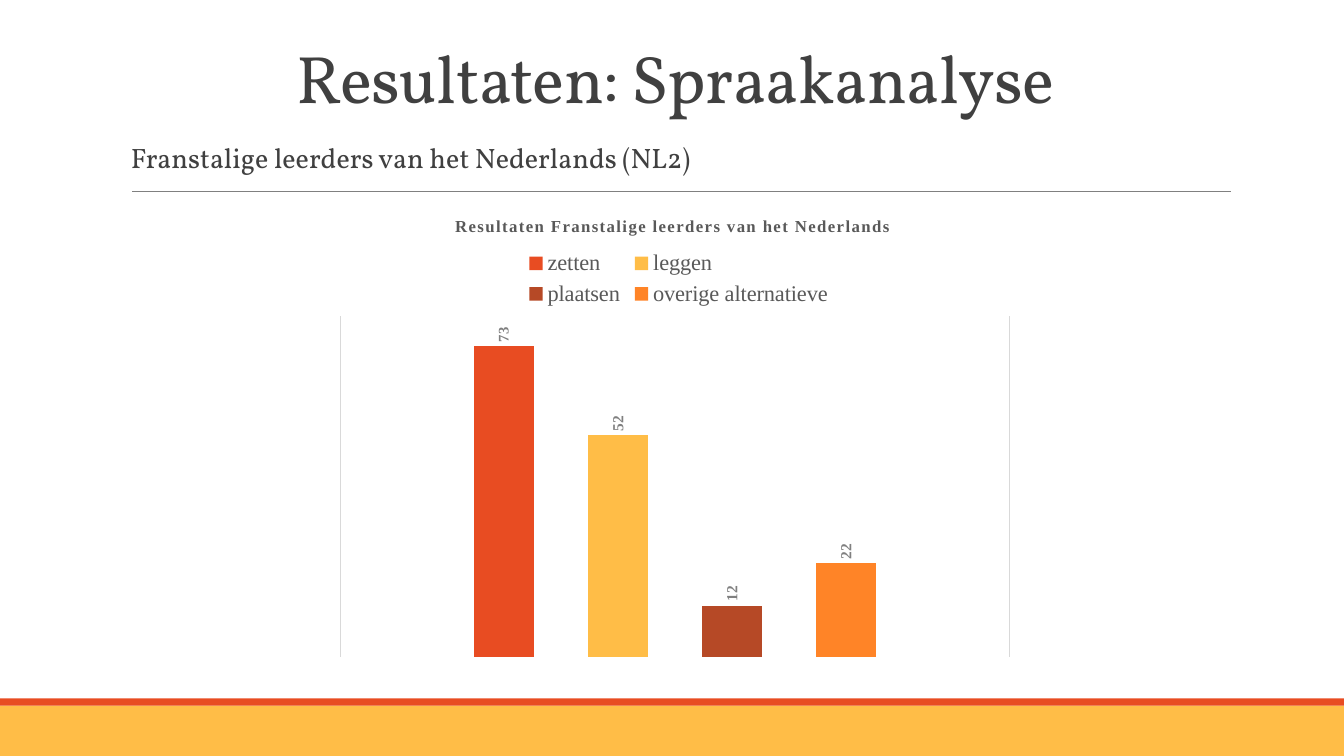
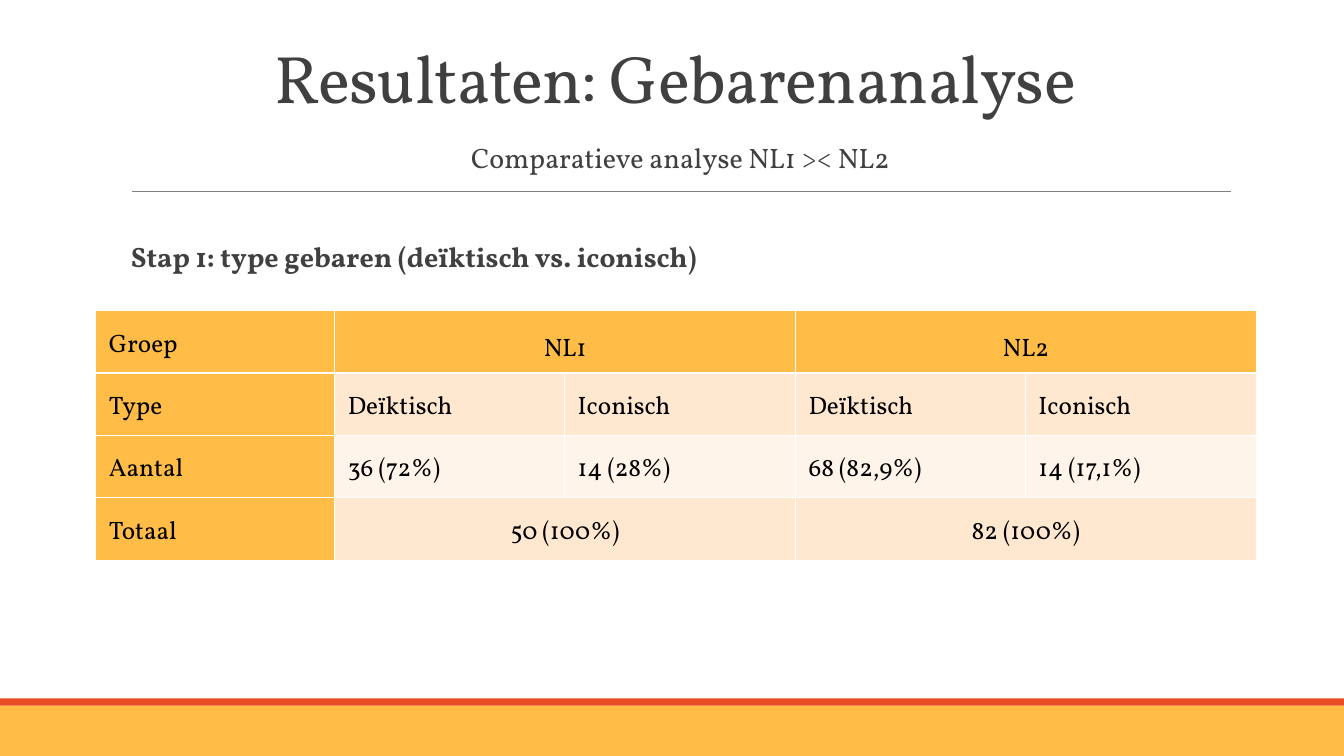
from pptx import Presentation
from pptx.chart.data import CategoryChartData
from pptx.dml.color import RGBColor
from pptx.enum.chart import XL_CHART_TYPE, XL_LABEL_POSITION, XL_LEGEND_POSITION
from pptx.enum.shapes import MSO_CONNECTOR, MSO_SHAPE
from pptx.enum.text import MSO_ANCHOR, PP_ALIGN
from pptx.oxml import parse_xml
from pptx.oxml.ns import nsdecls
from pptx.util import Inches, Pt

LEFT, CENTER, JUSTIFY = PP_ALIGN.LEFT, PP_ALIGN.CENTER, PP_ALIGN.JUSTIFY
TOP, MIDDLE, BOTTOM = MSO_ANCHOR.TOP, MSO_ANCHOR.MIDDLE, MSO_ANCHOR.BOTTOM
RECTANGLE = MSO_SHAPE.RECTANGLE
STRAIGHT = MSO_CONNECTOR.STRAIGHT
COLUMNS = XL_CHART_TYPE.COLUMN_CLUSTERED
OUTSIDE_END = XL_LABEL_POSITION.OUTSIDE_END
LEGEND_TOP = XL_LEGEND_POSITION.TOP

BLACK = RGBColor(0x00, 0x00, 0x00)
INK = RGBColor(0x40, 0x40, 0x40)
CHART_INK = RGBColor(0x59, 0x59, 0x59)
GREY = RGBColor(0x80, 0x80, 0x80)
GRID = RGBColor(0xD9, 0xD9, 0xD9)
RED = RGBColor(0xE8, 0x4C, 0x22)
YELLOW = RGBColor(0xFF, 0xBD, 0x47)
RUST = RGBColor(0xB6, 0x49, 0x26)
ORANGE = RGBColor(0xFF, 0x84, 0x27)
PEACH = RGBColor(0xFF, 0xE8, 0xCF)
CREAM = RGBColor(0xFF, 0xF4, 0xE9)

TEXT_FONT = "Vollkorn"
CHART_FONT = "Times New Roman"
PAGE_WIDTH, PAGE_HEIGHT = 13.33, 7.5
TEXT_LEFT, TEXT_WIDTH = 1.2, 11


def set_values(target, values):
    for name, value in values.items():
        setattr(target, name, value)


def style_font(font, color, size, name=TEXT_FONT, bold=False):
    set_values(font, {"name": name, "size": Pt(size), "bold": bold})
    font.color.rgb = color


def set_layout(element, index, x, y, w=None, h=None):
    for old in element.xpath("./c:layout"):
        element.remove(old)
    places = {"x": x, "y": y, "w": w, "h": h}
    marks = '<c:layoutTarget val="inner"/>' if index == 0 else ""
    marks += '<c:xMode val="edge"/><c:yMode val="edge"/>'
    marks += "".join(f'<c:{key} val="{value}"/>'
                     for key, value in places.items() if value is not None)
    element.insert(index, parse_xml(
        f'<c:layout {nsdecls("c")}><c:manualLayout>{marks}</c:manualLayout></c:layout>'))


class Deck:
    def __init__(self):
        self.deck = Presentation()
        self.deck.slide_width = Inches(PAGE_WIDTH)
        self.deck.slide_height = Inches(PAGE_HEIGHT)
        self.page = None

    def add_page(self, title):
        self.page = self.deck.slides.add_slide(self.deck.slide_layouts[6])
        self.band(7, 0.5, YELLOW)
        self.band(6.93, 0.07, RED)
        self.rule(1.31, 12.21, 1.9)
        span = self.text(title, 0.31, 0.9, 48, align=CENTER, anchor=BOTTOM, spacing=0.85)
        span._r.get_or_add_rPr().set("spc", "-50")

    def band(self, top, height, color):
        shape = self.page.shapes.add_shape(
            RECTANGLE, 0, Inches(top), Inches(PAGE_WIDTH), Inches(height))
        shape.shadow.inherit = False
        shape.fill.solid()
        shape.fill.fore_color.rgb = color
        shape.line.fill.background()

    def rule(self, left, right, top):
        line = self.page.shapes.add_connector(
            STRAIGHT, Inches(left), Inches(top), Inches(right), Inches(top))
        line.line.color.rgb = GREY
        line.line.width = Pt(0.5)
        line._element.spPr.append(parse_xml(f'<a:effectLst {nsdecls("a")}/>'))

    def text(self, words, top, height, size, align=LEFT, anchor=TOP, spacing=0.9, bold=False,
             right_inset=0.1):
        box = self.page.shapes.add_textbox(
            Inches(TEXT_LEFT), Inches(top), Inches(TEXT_WIDTH), Inches(height))
        set_values(box.text_frame, {
            "word_wrap": True, "vertical_anchor": anchor,
            "margin_left": Inches(0.1), "margin_right": Inches(right_inset)})
        para = box.text_frame.paragraphs[0]
        set_values(para, {"alignment": align, "line_spacing": spacing})
        span = para.add_run()
        span.text = words
        style_font(span.font, INK, size, bold=bold)
        return span

    def body(self, words, top, align=LEFT, bold=False):
        self.text(words, top, 0.45, 20, align, bold=bold, right_inset=0)

    def chart(self, title, category, columns, left, top, width, height):
        data = CategoryChartData()
        data.categories = [category]
        for name, value, color, size in columns:
            data.add_series(name, [value])
        chart = self.page.shapes.add_chart(
            COLUMNS, Inches(left), Inches(top), Inches(width), Inches(height), data).chart
        style_font(chart.font, BLACK, 10, "Calibri")

        chart.has_title = True
        span = chart.chart_title.text_frame.paragraphs[0].add_run()
        span.text = title
        style_font(span.font, CHART_INK, 12, CHART_FONT, True)
        span._r.get_or_add_rPr().set("spc", "100")

        chart.has_legend = True
        set_values(chart.legend, {"position": LEGEND_TOP, "include_in_layout": False})
        style_font(chart.legend.font, CHART_INK, 16, CHART_FONT)

        set_values(chart.value_axis, {
            "minimum_scale": 0, "maximum_scale": 80,
            "has_major_gridlines": False, "visible": False})
        set_values(chart.category_axis, {"has_major_gridlines": True, "visible": False})
        grid = chart.category_axis.major_gridlines.format.line
        grid.color.rgb = GRID
        grid.width = Pt(0.75)

        plot = chart.plots[0]
        set_values(plot, {"gap_width": 444, "overlap": -90, "vary_by_categories": False})
        for series, (name, value, color, size) in zip(plot.series, columns):
            series.format.fill.solid()
            series.format.fill.fore_color.rgb = color
            labels = series.data_labels
            set_values(labels, {"show_value": True, "position": OUTSIDE_END})
            style_font(labels.font, GREY, size, CHART_FONT, True)

        root = chart._chartSpace
        for body in root.xpath(".//c:dLbls/c:txPr/a:bodyPr"):
            body.set("rot", "-5400000")
            body.set("vert", "horz")
        set_layout(root.xpath("./c:chart/c:title")[0], 1, 0.18, 0.04)
        set_layout(root.xpath("./c:chart/c:legend")[0], 1, 0.28, 0.11, 0.45, 0.14)
        set_layout(root.xpath("./c:chart/c:plotArea")[0], 0, 0.02, 0.26, 0.96, 0.72)

    def table(self, rows, fills, left, top, widths, row_height):
        table = self.page.shapes.add_table(
            len(rows), len(widths), Inches(left), Inches(top),
            Inches(sum(widths)), Inches(row_height * len(rows))).table
        set_values(table, {"first_row": False, "horz_banding": False})
        for column, width in zip(table.columns, widths):
            column.width = Inches(width)
        for row_index, (row, fill) in enumerate(zip(rows, fills)):
            table.rows[row_index].height = Inches(row_height)
            for index, words in enumerate(row):
                cell = table.cell(row_index, index)
                self.cell_look(cell, fill if index else YELLOW)
                if words is None:
                    continue
                merged = index + 1 < len(row) and row[index + 1] is None
                if merged:
                    cell.merge(table.cell(row_index, index + 1))
                if merged and row_index == 0:
                    cell.vertical_anchor = MIDDLE
                para = cell.text_frame.paragraphs[0]
                set_values(para, {"alignment": CENTER if merged else JUSTIFY,
                                  "line_spacing": 1.5})
                span = para.add_run()
                span.text = words
                style_font(span.font, BLACK, 18)

    def cell_look(self, cell, fill):
        set_values(cell, {"margin_left": Inches(0.13), "margin_right": Inches(0.13),
                          "margin_top": 0, "margin_bottom": 0})
        cell.fill.solid()
        cell.fill.fore_color.rgb = fill
        properties = cell._tc.get_or_add_tcPr()
        for index, side in enumerate("LRTB"):
            properties.insert(index, parse_xml(
                f'<a:ln{side} {nsdecls("a")} w="12700"><a:solidFill>'
                f'<a:srgbClr val="FFFFFF"/></a:solidFill></a:ln{side}>'))


def main():
    deck = Deck()

    deck.add_page("Resultaten: Spraakanalyse")
    deck.body("Franstalige leerders van het Nederlands (NL2)", 1.38)
    deck.chart(
        "Resultaten Franstalige leerders van het Nederlands", "1",
        [("zetten", 73, RED, 10.5),
         ("leggen", 52, YELLOW, 11),
         ("plaatsen", 12, RUST, 11),
         ("overige alternatieve", 22, ORANGE, 11)],
        3.24, 1.92, 6.91, 4.69)

    deck.add_page("Resultaten: Gebarenanalyse")
    deck.body("Comparatieve analyse NL1 >< NL2", 1.38, align=CENTER)
    deck.body("Stap 1: type gebaren (deïktisch vs. iconisch)", 2.36, bold=True)
    deck.table(
        [["Groep", "NL1", None, "NL2", None],
         ["Type"] + ["Deïktisch", "Iconisch"] * 2,
         ["Aantal", "36 (72%)", "14 (28%)", "68 (82,9%)", "14 (17,1%)"],
         ["Totaal", "50 (100%)", None, "82 (100%)", None]],
        [YELLOW, PEACH, CREAM, PEACH],
        0.95, 3.08, [2.37] + [2.28, 2.29] * 2, 0.62)

    deck.deck.save("out.pptx")


if __name__ == "__main__":
    main()
